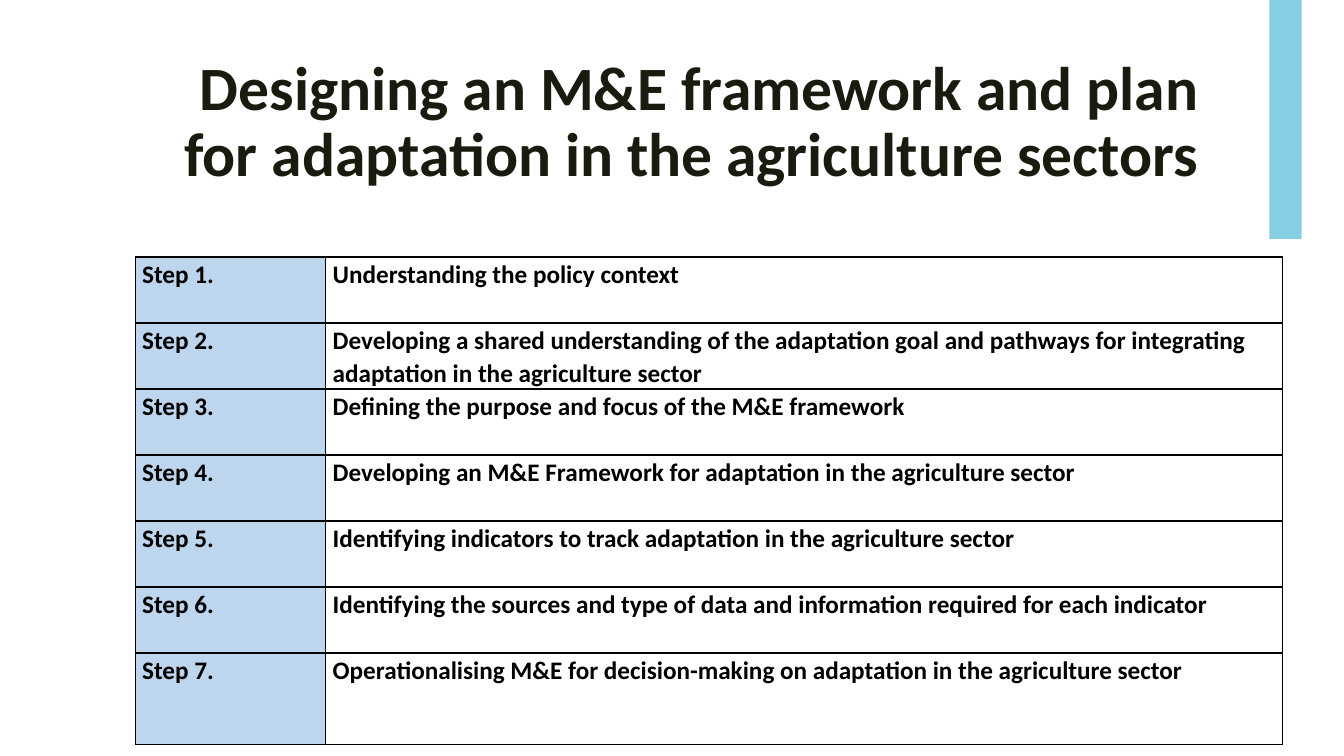
from pptx import Presentation
from pptx.dml.color import RGBColor
from pptx.enum.shapes import MSO_SHAPE
from pptx.enum.text import MSO_ANCHOR, PP_ALIGN
from pptx.oxml import parse_xml
from pptx.oxml.ns import nsdecls
from pptx.util import Inches, Pt

RECTANGLE = MSO_SHAPE.RECTANGLE
TOP = MSO_ANCHOR.TOP
RIGHT = PP_ALIGN.RIGHT

BAR_COLOR, STEP_FILL, WHITE = "86CEE3", "BDD6EE", "FFFFFF"
TITLE_COLOR, BLACK = "191B0E", "000000"

TITLE = "Designing an M&E framework and plan for adaptation in the agriculture sectors"
STEPS = [
    "Understanding the policy context",
    "Developing a shared understanding of the adaptation goal and pathways "
    "for integrating adaptation in the agriculture sector",
    "Defining the purpose and focus of the M&E framework",
    "Developing an M&E Framework for adaptation in the agriculture sector",
    "Identifying indicators to track adaptation in the agriculture sector",
    "Identifying the sources and type of data and information required for each indicator",
    "Operationalising M&E for decision-making on adaptation in the agriculture sector",
]
STEP_WIDTH = 1.89
LAST_ROW_HEIGHT = 0.91


def color(value):
    """Turn a hex string into a colour."""
    return RGBColor.from_string(value)


def write(para, text, size, hex_color, spacing):
    """Put bold Calibri text into a paragraph."""
    para.line_spacing = spacing
    span = para.add_run()
    span.text = text
    for name, value in {"name": "Calibri", "size": Pt(size), "bold": True}.items():
        setattr(span.font, name, value)
    span.font.color.rgb = color(hex_color)


def add_bar(page, left, top, width, height):
    """Draw the accent bar."""
    bar = page.shapes.add_shape(RECTANGLE, *map(Inches, (left, top, width, height)))
    bar.shadow.inherit = False
    bar.fill.solid()
    bar.fill.fore_color.rgb = color(BAR_COLOR)
    bar.line.fill.background()


def add_title(page, left, top, width, height):
    """Write the right-aligned heading."""
    box = page.shapes.add_textbox(*map(Inches, (left, top, width, height)))
    frame = box.text_frame
    frame.word_wrap = True
    frame.vertical_anchor = TOP
    para = frame.paragraphs[0]
    para.alignment = RIGHT
    write(para, TITLE, 44, TITLE_COLOR, 0.89)


def format_cell(cell, text, fill):
    """Fill, border and label one table cell."""
    margins = {"margin_left": 0.07, "margin_right": 0.07, "margin_top": 0, "margin_bottom": 0}
    for name, value in margins.items():
        setattr(cell, name, Inches(value))
    cell.vertical_anchor = TOP
    write(cell.text_frame.paragraphs[0], text, 18, BLACK, 1.07)
    properties = cell._tc.get_or_add_tcPr()
    for side in ("lnL", "lnR", "lnT", "lnB"):
        properties.append(parse_xml(
            f'<a:{side} {nsdecls("a")} w="{Pt(1)}"><a:solidFill>'
            f'<a:srgbClr val="{BLACK}"/></a:solidFill></a:{side}>'))
    cell.fill.solid()
    cell.fill.fore_color.rgb = color(fill)


def add_steps(page, left, top, width, height):
    """Build the table of numbered steps."""
    lengths = map(Inches, (left, top, width, height))
    table = page.shapes.add_table(len(STEPS), 2, *lengths).table
    table.first_row = table.horz_banding = False
    table.columns[0].width = Inches(STEP_WIDTH)
    table.columns[1].width = Inches(width - STEP_WIDTH)
    row_height = (height - LAST_ROW_HEIGHT) / (len(STEPS) - 1)
    for index, step in enumerate(STEPS):
        table.rows[index].height = Inches(row_height)
        format_cell(table.cell(index, 0), f"Step {index + 1}.", STEP_FILL)
        format_cell(table.cell(index, 1), step, WHITE)
    table.rows[len(STEPS) - 1].height = Inches(LAST_ROW_HEIGHT)


def main():
    """Build the slide and save it."""
    deck = Presentation()
    deck.slide_width, deck.slide_height = Inches(13.33), Inches(7.5)
    page = deck.slides.add_slide(deck.slide_layouts[6])
    add_bar(page, 12.59, 0, 0.32, 2.37)
    add_title(page, 1.5, 0.53, 10.5, 1.95)
    add_steps(page, 1.34, 2.55, 11.38, 4.84)
    deck.save("out.pptx")


if __name__ == "__main__":
    main()
